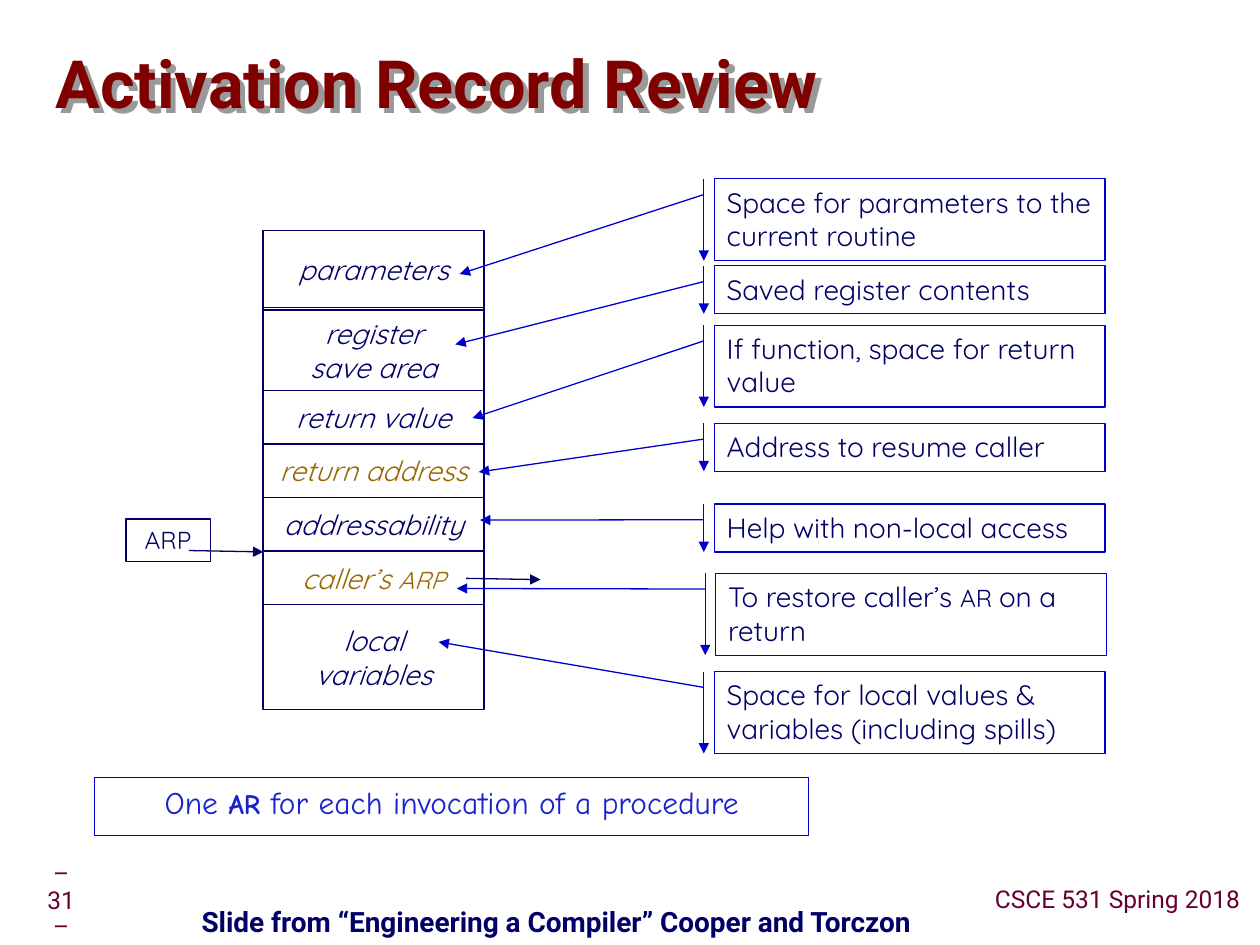
import pptx
import pptx.util
import pptx.dml.color
import pptx.enum.shapes
import pptx.enum.text
import pptx.oxml
import pptx.oxml.ns

Pt = pptx.util.Pt
SHAPES = pptx.enum.shapes.MSO_SHAPE
ALIGN = pptx.enum.text.PP_ALIGN
ANCHOR = pptx.enum.text.MSO_ANCHOR
NAMESPACE = pptx.oxml.ns.nsdecls("a")

COLORS = {
    "title": "800000",
    "shadow": "999999",
    "footer": "660033",
    "navy": "000066",
    "gold": "996600",
    "blue": "0000CC",
    "summary": "1822CD",
}

RECORD_FIELDS = [
    ("parameters", 43.9, 1.4, "navy"),
    ("register\nsave area", 46, 0, "navy"),
    ("return value", 30.6, 0, "navy"),
    ("return address", 30.6, 0, "gold"),
    ("addressability", 30.6, 0, "navy"),
    ([[("caller’s ", {}), ("ARP", {"size": 14})]], 30.6, 0, "gold"),
    ("local\nvariables", 60, 0, "navy"),
]
RECORD_LEFT, RECORD_TOP, RECORD_WIDTH = 150.5, 131.8, 126

RESTORE_TEXT = [
    [("To restore caller’s ", {}), ("AR ", {"size": 14}), ("on a", {})],
    [("return", {})],
]
CALLOUTS = [
    ("Space for parameters to the current routine", 408.2, 102.2, 46.8, (262.7, 156.6)),
    ("Saved register contents", 408.2, 151.9, 27.4, (260.2, 196.8)),
    ("If function, space for return value", 408.2, 185.8, 46.8, (270, 238.9)),
    ("Address to resume caller", 408.2, 241.9, 27.4, (273.6, 269.7)),
    ("Help with non-local access", 408.2, 288, 27.4, (274.3, 297.2)),
    (RESTORE_TEXT, 409, 327.6, 46.8, (261, 336.3)),
    ("Space for local values & variables (including spills)", 408.2, 383.8, 46.8, (250.6, 366.8)),
]
CALLOUT_WIDTH = 223.2
BAR_OFFSET, LEADER_DROP = -6, 9

POINTERS = [((108, 314.6), (150.5, 315.4)), ((266.4, 330.5), (308.9, 331.2))]

SUMMARY = [[
    ("One ", {}),
    ("AR", {"size": 16, "bold": True}),
    (" for each invocation of a procedure", {}),
]]


def rgb(name):
    return pptx.dml.color.RGBColor.from_string(COLORS[name])


def write_text(shape, text, size=16, font="Quicksand", color="navy", bold=False,
               italic=False, align=ALIGN.LEFT, anchor=ANCHOR.TOP, wrap=True,
               insets=(7.2, 3.6, 7.2, 3.6), line_spacing=None):
    frame = shape.text_frame
    frame.word_wrap = wrap
    frame.vertical_anchor = anchor
    frame.margin_left, frame.margin_top, frame.margin_right, frame.margin_bottom = map(Pt, insets)
    lines = [[(line, {})] for line in text.split("\n")] if isinstance(text, str) else text
    for index, runs in enumerate(lines):
        paragraph = frame.add_paragraph() if index else frame.paragraphs[0]
        paragraph.alignment = align
        if line_spacing:
            paragraph.line_spacing = line_spacing
        for words, changes in runs:
            run = paragraph.add_run()
            run.text = words
            run.font.name = font
            run.font.size = Pt(changes.get("size", size))
            run.font.bold = changes.get("bold", bold)
            run.font.italic = italic
            run.font.color.rgb = rgb(color)


def add_text_box(slide, box, text, **style):
    shape = slide.shapes.add_textbox(*map(Pt, box))
    write_text(shape, text, **style)
    return shape


def add_outline(slide, box, color, width=0.75, kind=SHAPES.RECTANGLE):
    shape = slide.shapes.add_shape(kind, *map(Pt, box))
    shape.shadow.inherit = False
    shape.fill.background()
    shape.line.color.rgb = rgb(color)
    shape.line.width = Pt(width)
    return shape


def add_arrowhead(line):
    line._get_or_add_ln().append(
        pptx.oxml.parse_xml(f'<a:tailEnd {NAMESPACE} type="triangle"/>'))


def add_title(slide):
    title = add_text_box(slide, (31.7, 19.4, 686.2, 61.2), "Activation Record Review",
                         size=38, font="Roboto", color="title", bold=True,
                         anchor=ANCHOR.MIDDLE, insets=(0, 0, 0, 0), line_spacing=0.87)
    title._element.spPr.append(pptx.oxml.parse_xml(
        f'<a:effectLst {NAMESPACE}><a:outerShdw dist="{Pt(4.5)}" dir="2700000" algn="ctr">'
        f'<a:srgbClr val="{COLORS["shadow"]}"/></a:outerShdw></a:effectLst>'))


def add_record(slide):
    top = RECORD_TOP
    for text, height, gap, color in RECORD_FIELDS:
        field = add_outline(slide, (RECORD_LEFT, top, RECORD_WIDTH, height), "navy")
        write_text(field, text, color=color, italic=True, align=ALIGN.CENTER,
                   anchor=ANCHOR.MIDDLE, wrap=False)
        top += height + gap
    add_outline(slide, (RECORD_LEFT, RECORD_TOP, RECORD_WIDTH, top - RECORD_TOP), "navy", 1)


def add_pointers(slide):
    label = add_outline(slide, (72, 296.6, 48.2, 24.5), "navy")
    write_text(label, "ARP", size=14, align=ALIGN.CENTER)
    for start, end in POINTERS:
        arrow = slide.shapes.add_connector(
            pptx.enum.shapes.MSO_CONNECTOR.STRAIGHT, *map(Pt, start + end))
        arrow.line.color.rgb = rgb("navy")
        arrow.line.width = Pt(0.75)
        add_arrowhead(arrow.line)
        arrow._element.spPr.append(pptx.oxml.parse_xml(f"<a:effectLst {NAMESPACE}/>"))


def add_callouts(slide):
    for text, left, top, height, (target_x, target_y) in CALLOUTS:
        callout = add_outline(slide, (left, top, CALLOUT_WIDTH, height), "blue",
                              kind=SHAPES.LINE_CALLOUT_1_BORDER_AND_ACCENT_BAR)
        ratios = (LEADER_DROP / height, BAR_OFFSET / CALLOUT_WIDTH,
                  (target_y - top) / height, (target_x - left) / CALLOUT_WIDTH)
        for index, ratio in enumerate(ratios):
            callout.adjustments[index] = ratio
        add_arrowhead(callout.line)
        write_text(callout, text)


def add_footers(slide):
    footer = dict(size=14, font="Roboto", color="footer", align=ALIGN.CENTER,
                  anchor=ANCHOR.MIDDLE, line_spacing=0.9)
    add_text_box(slide, (17.3, 504, 47.5, 22.3), "– 31 –",
                 insets=(3.6, 3.6, 15.8, 3.6), **footer)
    add_text_box(slide, (561.6, 503.3, 154.1, 22.3), "CSCE 531 Spring 2018",
                 wrap=False, insets=(3.6,) * 4, **footer)
    add_text_box(slide, (72, 515.5, 491.8, 24.5),
                 "Slide from “Engineering a Compiler” Cooper and Torczon",
                 font="Roboto", bold=True, align=ALIGN.CENTER,
                 insets=(3.6,) * 4, line_spacing=0.9)


def main():
    presentation = pptx.Presentation()
    presentation.slide_width, presentation.slide_height = Pt(720), Pt(540)
    slide = presentation.slides.add_slide(presentation.slide_layouts[6])
    add_title(slide)
    add_record(slide)
    add_pointers(slide)
    add_callouts(slide)
    summary = add_outline(slide, (54, 444.2, 408.2, 33.1), "blue")
    write_text(summary, SUMMARY, size=18, font="Comic Neue", color="summary",
               align=ALIGN.CENTER)
    add_footers(slide)
    presentation.save("out.pptx")


if __name__ == "__main__":
    main()
